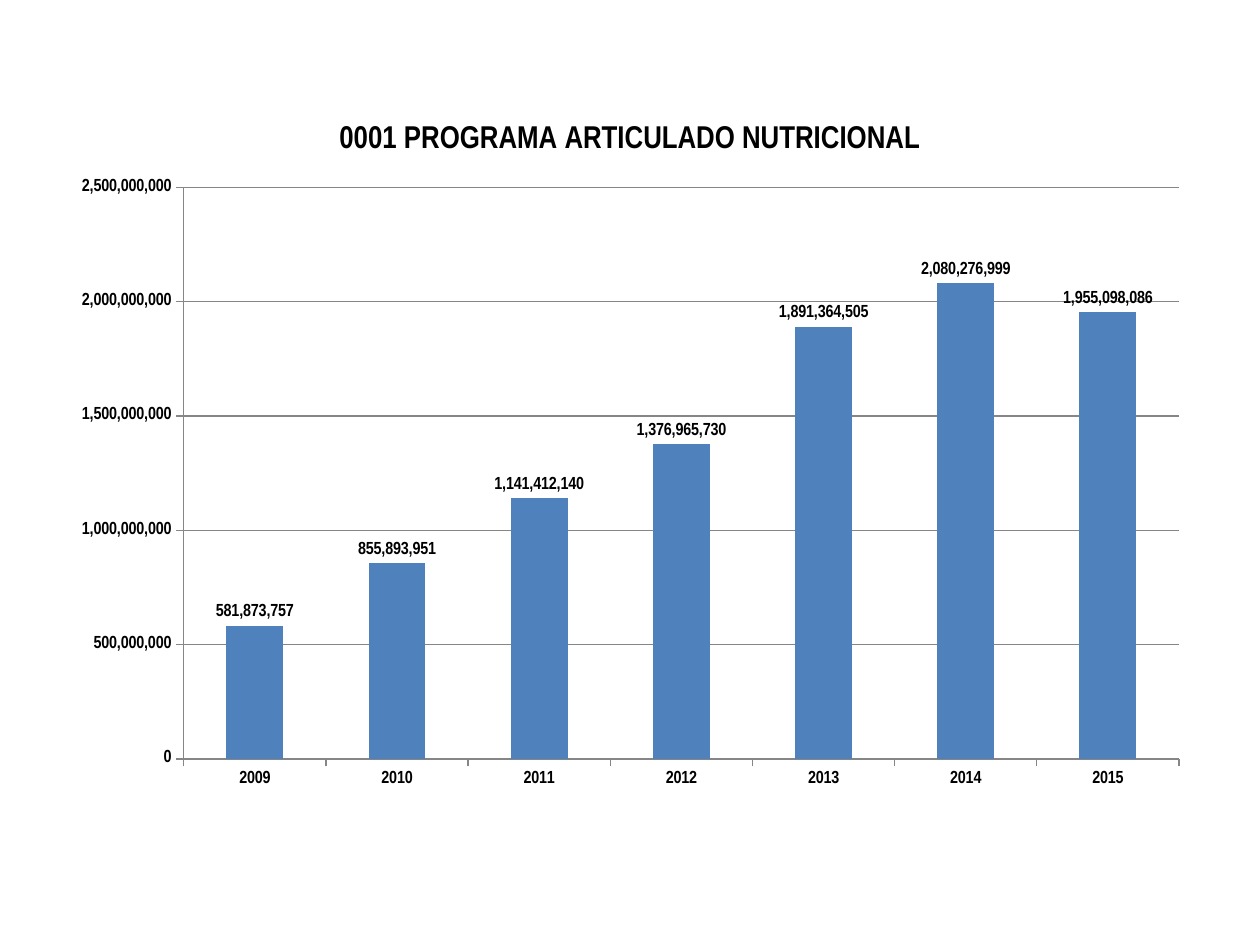
from lxml import etree
from pptx import Presentation
from pptx import util as u
from pptx.chart import data as cd
from pptx.dml.color import RGBColor
from pptx.enum import chart as ce
from pptx.oxml import ns


def color(code):
    return RGBColor.from_string(code)


class Deck:
    font = "Arial Narrow"
    ink = "000000"
    rule = "868686"
    bar = "4F81BD"
    form = "#,##0"

    def __init__(self, wide, high):
        self.prs = Presentation()
        self.prs.slide_width = u.Inches(wide)
        self.prs.slide_height = u.Inches(high)
        self.slide = self.prs.slides.add_slide(self.prs.slide_layouts[6])

    def style(self, font, size):
        font.name = self.font
        font.size = u.Pt(size)
        font.bold = True
        font.color.rgb = color(self.ink)

    def line(self, form):
        form.line.color.rgb = color(self.rule)
        form.line.width = u.Pt(0.75)

    def place(self, chart, box):
        area = chart.plots[0]._element.getparent()
        for old in area.findall(ns.qn("c:layout")):
            area.remove(old)
        layout = etree.Element(ns.qn("c:layout"))
        area.insert(0, layout)
        inner = etree.SubElement(layout, ns.qn("c:manualLayout"))
        parts = [("layoutTarget", "inner"), ("xMode", "edge"), ("yMode", "edge")]
        for tag, val in parts + list(zip("xywh", box)):
            etree.SubElement(inner, ns.qn("c:" + tag)).set("val", str(val))

    def columns(self, title, years, sums, box, plot_box):
        data = cd.CategoryChartData(number_format=self.form)
        data.categories = years
        data.add_series(title, sums)
        frame = self.slide.shapes.add_chart(
            ce.XL_CHART_TYPE.COLUMN_CLUSTERED, *map(u.Inches, box), data)
        chart = frame.chart
        self.style(chart.font, 10)
        chart.has_legend = False
        chart.has_title = True
        head = chart.chart_title.text_frame
        head.text = title
        self.style(head.paragraphs[0].runs[0].font, 18)

        plot = chart.plots[0]
        plot.gap_width = 150
        plot.vary_by_categories = False
        fill = plot.series[0].format.fill
        fill.solid()
        fill.fore_color.rgb = color(self.bar)
        plot.has_data_labels = True
        tags = plot.data_labels
        tags.show_value = True
        tags.number_format = self.form
        tags.number_format_is_linked = False
        tags.position = ce.XL_LABEL_POSITION.OUTSIDE_END
        self.style(tags.font, 10)

        for axis in (chart.category_axis, chart.value_axis):
            axis.major_tick_mark = ce.XL_TICK_MARK.OUTSIDE
            axis.minor_tick_mark = ce.XL_TICK_MARK.NONE
            self.style(axis.tick_labels.font, 10)
            self.line(axis.format)
        scale = chart.value_axis
        scale.minimum_scale = 0
        scale.maximum_scale = 2500000000
        scale.major_unit = 500000000
        scale.tick_labels.number_format = self.form
        scale.tick_labels.number_format_is_linked = False
        scale.has_major_gridlines = True
        self.line(scale.major_gridlines.format)
        self.place(chart, plot_box)

    def save(self):
        self.prs.save("out.pptx")


def main():
    deck = Deck(10, 7.5)
    years = [str(year) for year in range(2009, 2016)]
    sums = [581873757, 855893951, 1141412140, 1376965730,
            1891364505, 2080276999, 1955098086]
    deck.columns("0001 PROGRAMA ARTICULADO NUTRICIONAL", years, sums,
                 (0.46, 0.76, 9.08, 5.6), (0.11, 0.13, 0.87, 0.81))
    deck.save()


if __name__ == "__main__":
    main()
